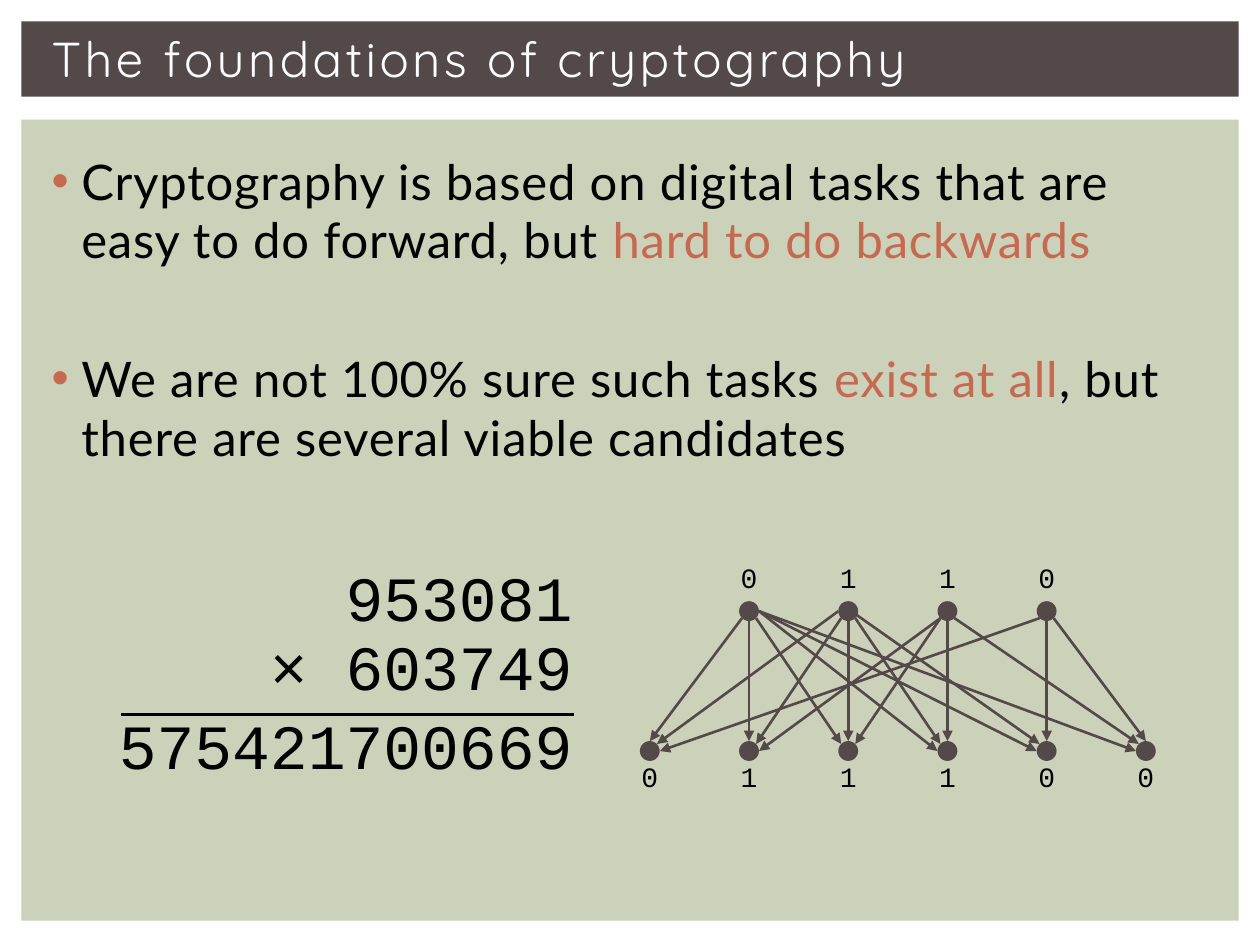
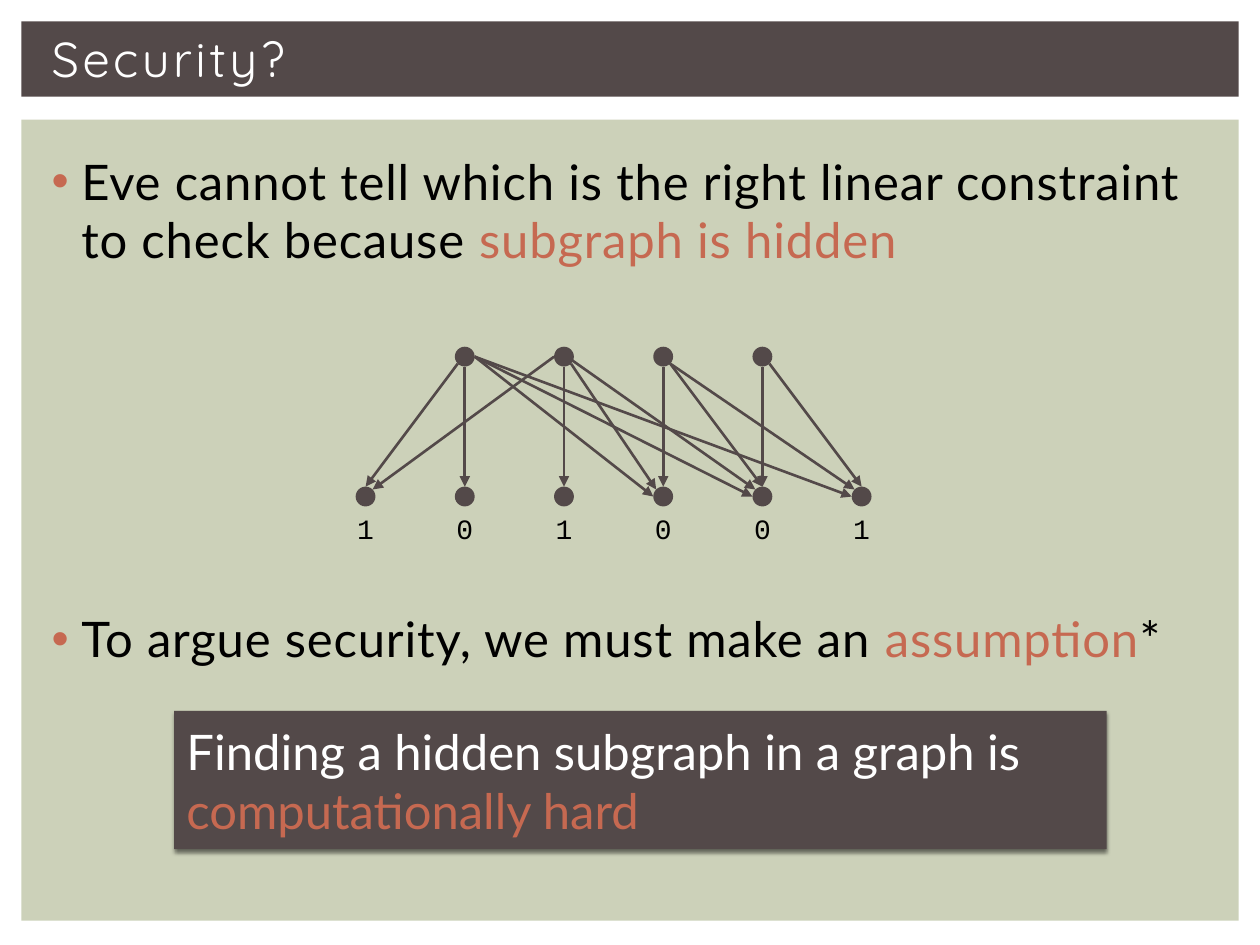
from dataclasses import dataclass
from math import sqrt

from lxml.etree import SubElement
from pptx import Presentation
from pptx.dml.color import RGBColor
from pptx.enum.shapes import MSO_CONNECTOR, MSO_SHAPE
from pptx.enum.text import MSO_ANCHOR, PP_ALIGN
from pptx.oxml.ns import qn
from pptx.util import Cm, Pt


@dataclass(frozen=True)
class Theme:
    dark: RGBColor = RGBColor(0x53, 0x49, 0x49)
    panel: RGBColor = RGBColor(0xCC, 0xD1, 0xB9)
    accent: RGBColor = RGBColor(0xC6, 0x69, 0x51)
    black: RGBColor = RGBColor(0, 0, 0)
    white: RGBColor = RGBColor(255, 255, 255)
    title_font: str = "Quicksand"
    body_font: str = "Lato"
    digit_font: str = "Courier New"
    body_size: float = 28
    sum_size: float = 36
    label_size: float = 16
    line_width: float = 1.5
    paragraph_gap: float = 12
    body_line: float = 33.6


THEME = Theme()

# Graph geometry in centimetres
COLUMN_STEP = 2.0
ROW_STEP = 2.82
RADIUS = 0.2
DIAGONAL = 1 / sqrt(2)
COMPASS = {
    "n": (0, -1), "s": (0, 1), "w": (-1, 0), "e": (1, 0),
    "nw": (-DIAGONAL, -DIAGONAL), "ne": (DIAGONAL, -DIAGONAL),
    "sw": (-DIAGONAL, DIAGONAL), "se": (DIAGONAL, DIAGONAL),
}

# Edges: input node, output node, side left, side reached
SHARED_EDGES = [
    (0, 0, "sw", "n"), (0, 1, "s", "n"), (0, 3, "e", "w"),
    (0, 4, "e", "w"), (0, 5, "e", "w"),
    (1, 0, "w", "ne"), (1, 2, "s", "n"), (1, 3, "se", "nw"),
    (1, 4, "nw", "nw"),
    (2, 3, "s", "n"), (2, 5, "se", "nw"),
    (3, 4, "s", "n"), (3, 5, "se", "n"),
]
FUNCTION_EDGES = SHARED_EDGES + [
    (0, 2, "se", "nw"), (1, 1, "sw", "ne"), (2, 1, "sw", "e"),
    (2, 2, "sw", "ne"), (3, 0, "sw", "e"),
]
HIDDEN_EDGES = SHARED_EDGES + [(2, 4, "se", "n")]


def format_span(span, font, size, color, spacing=0):
    span.font.name = font
    span.font.size = Pt(size)
    span.font.color.rgb = color
    if spacing:
        span._r.get_or_add_rPr().set("spc", str(round(spacing * 100)))


def add_spans(para, pieces, font, size, spacing=0):
    """Write (text, color) pieces into one paragraph."""
    for text, color in pieces:
        span = para.add_run()
        span.text = text
        format_span(span, font, size, color, spacing)


def add_box(page, left, top, width, height, wrap=True):
    box = page.shapes.add_textbox(Cm(left), Cm(top), Cm(width), Cm(height))
    box.text_frame.word_wrap = wrap
    return box


def add_solid(page, kind, left, top, width, height, color):
    shape = page.shapes.add_shape(kind, Cm(left), Cm(top), Cm(width), Cm(height))
    shape.shadow.inherit = False
    shape.fill.solid()
    shape.fill.fore_color.rgb = color
    shape.line.fill.background()
    return shape


def add_line(page, start, end, color, arrow=False):
    line = page.shapes.add_connector(
        MSO_CONNECTOR.STRAIGHT, *(Cm(value) for value in (*start, *end)))
    line.line.color.rgb = color
    line.line.width = Pt(THEME.line_width)
    if arrow:
        SubElement(line.line._get_or_add_ln(), qn("a:tailEnd"), type="triangle")
    SubElement(line._element.spPr, qn("a:effectLst"))


def add_page(deck, title):
    page = deck.slides.add_slide(deck.slide_layouts[6])
    add_solid(page, MSO_SHAPE.RECTANGLE, 0.43, 2.41, 24.54, 16.15, THEME.panel)
    add_solid(page, MSO_SHAPE.RECTANGLE, 0.43, 0.43, 24.54, 1.52, THEME.dark)
    frame = add_box(page, 0.79, 0.41, 23.88, 1.5).text_frame
    frame.vertical_anchor = MSO_ANCHOR.MIDDLE
    add_spans(frame.paragraphs[0], [(title, THEME.white)],
              THEME.title_font, THEME.body_size, 2)
    return page


def add_bullets(page, height, bullets):
    """Each bullet is (space above in points, text pieces)."""
    frame = add_box(page, 0.79, 2.92, 23.72, height).text_frame
    for index, (space_above, pieces) in enumerate(bullets):
        para = frame.add_paragraph() if index else frame.paragraphs[0]
        para.space_before = Pt(space_above)
        properties = para._p.get_or_add_pPr()
        properties.set("marL", str(Cm(0.6)))
        properties.set("indent", str(-Cm(0.6)))
        bullet_color = SubElement(properties, qn("a:buClr"))
        SubElement(bullet_color, qn("a:srgbClr"), val=str(THEME.accent))
        SubElement(properties, qn("a:buFont"), typeface="Arial")
        SubElement(properties, qn("a:buChar"), char="•")
        add_spans(para, pieces, THEME.body_font, THEME.body_size, 0.5)


def add_digits(page, left, top, width, height, text, size, align):
    para = add_box(page, left, top, width, height, wrap=False).text_frame.paragraphs[0]
    para.text = text
    para.alignment = align
    format_span(para.runs[0], THEME.digit_font, size, THEME.black)


def add_multiplication(page):
    """Stack right-aligned rows in boxes of equal width."""
    for text, top in (("953081", 11.13), ("× 603749", 12.52), ("575421700669", 14.12)):
        add_digits(page, 2.04, top, 9.75, 1.8, text, THEME.sum_size, PP_ALIGN.RIGHT)
    add_line(page, (2.44, 14.4), (11.58, 14.4), THEME.black)


def add_labels(page, nodes, bits, offset):
    for (x, y), bit in zip(nodes, bits):
        add_digits(page, x - 0.43, y + offset, 0.86, 0.94, bit,
                   THEME.label_size, PP_ALIGN.CENTER)


def rim_point(node, side):
    return tuple(center + RADIUS * step for center, step in zip(node, COMPASS[side]))


def add_graph(page, left, top, edges):
    """Draw four inputs above six outputs; left and top are node centres."""
    inputs = [(left + COLUMN_STEP * (column + 1), top) for column in range(4)]
    outputs = [(left + COLUMN_STEP * column, top + ROW_STEP) for column in range(6)]
    for x, y in inputs + outputs:
        add_solid(page, MSO_SHAPE.OVAL, x - RADIUS, y - RADIUS,
                  2 * RADIUS, 2 * RADIUS, THEME.dark)
    for source, target, leaving, reaching in edges:
        add_line(page, rim_point(inputs[source], leaving),
                 rim_point(outputs[target], reaching), THEME.dark, arrow=True)
    return inputs, outputs


def add_callout(page, pieces):
    shape = add_solid(page, MSO_SHAPE.RECTANGLE, 3.51, 14.33, 18.8, 2.79, THEME.dark)
    effects = shape._element.spPr.find(qn("a:effectLst"))
    shadow = SubElement(effects, qn("a:outerShdw"), blurRad=str(Pt(2.5)),
                        dist=str(Pt(2)), dir="5400000", rotWithShape="0")
    shadow_color = SubElement(shadow, qn("a:srgbClr"), val=str(THEME.black))
    SubElement(shadow_color, qn("a:alpha"), val="50000")
    frame = shape.text_frame
    frame.word_wrap = True
    frame.vertical_anchor = MSO_ANCHOR.MIDDLE
    frame.paragraphs[0].alignment = PP_ALIGN.LEFT
    add_spans(frame.paragraphs[0], pieces, THEME.body_font, THEME.body_size)


def build_foundations(deck):
    page = add_page(deck, "The foundations of cryptography")
    add_bullets(page, 7.01, [
        (THEME.paragraph_gap,
         [("Cryptography is based on digital tasks that are easy to do "
           "forward, but ", THEME.black),
          ("hard to do backwards", THEME.accent)]),
        (THEME.paragraph_gap + THEME.body_line,
         [("We are not 100% sure such tasks ", THEME.black),
          ("exist at all", THEME.accent),
          (", but there are several viable candidates", THEME.black)]),
    ])
    add_multiplication(page)
    inputs, outputs = add_graph(page, 13.1, 12.32, FUNCTION_EDGES)
    add_labels(page, inputs, "0110", -1.14)
    add_labels(page, outputs, "011100", 0.05)


def build_security(deck):
    page = add_page(deck, "Security?")
    add_bullets(page, 11, [
        (THEME.paragraph_gap,
         [("Eve cannot tell which is the right linear constraint to check "
           "because ", THEME.black),
          ("subgraph is hidden", THEME.accent)]),
        # Leave room for the graph: four lines and five gaps
        (5 * THEME.paragraph_gap + 4 * THEME.body_line,
         [("To argue security, we must make an ", THEME.black),
          ("assumption", THEME.accent), ("*", THEME.black)]),
    ])
    outputs = add_graph(page, 7.37, 7.19, HIDDEN_EDGES)[1]
    add_labels(page, outputs, "101001", 0.18)
    add_callout(page, [("Finding a hidden subgraph in a graph is ", THEME.white),
                       ("computationally hard", THEME.accent)])


def main():
    deck = Presentation()
    deck.slide_width, deck.slide_height = Cm(25.4), Cm(19.05)
    build_foundations(deck)
    build_security(deck)
    deck.save("out.pptx")


if __name__ == "__main__":
    main()
